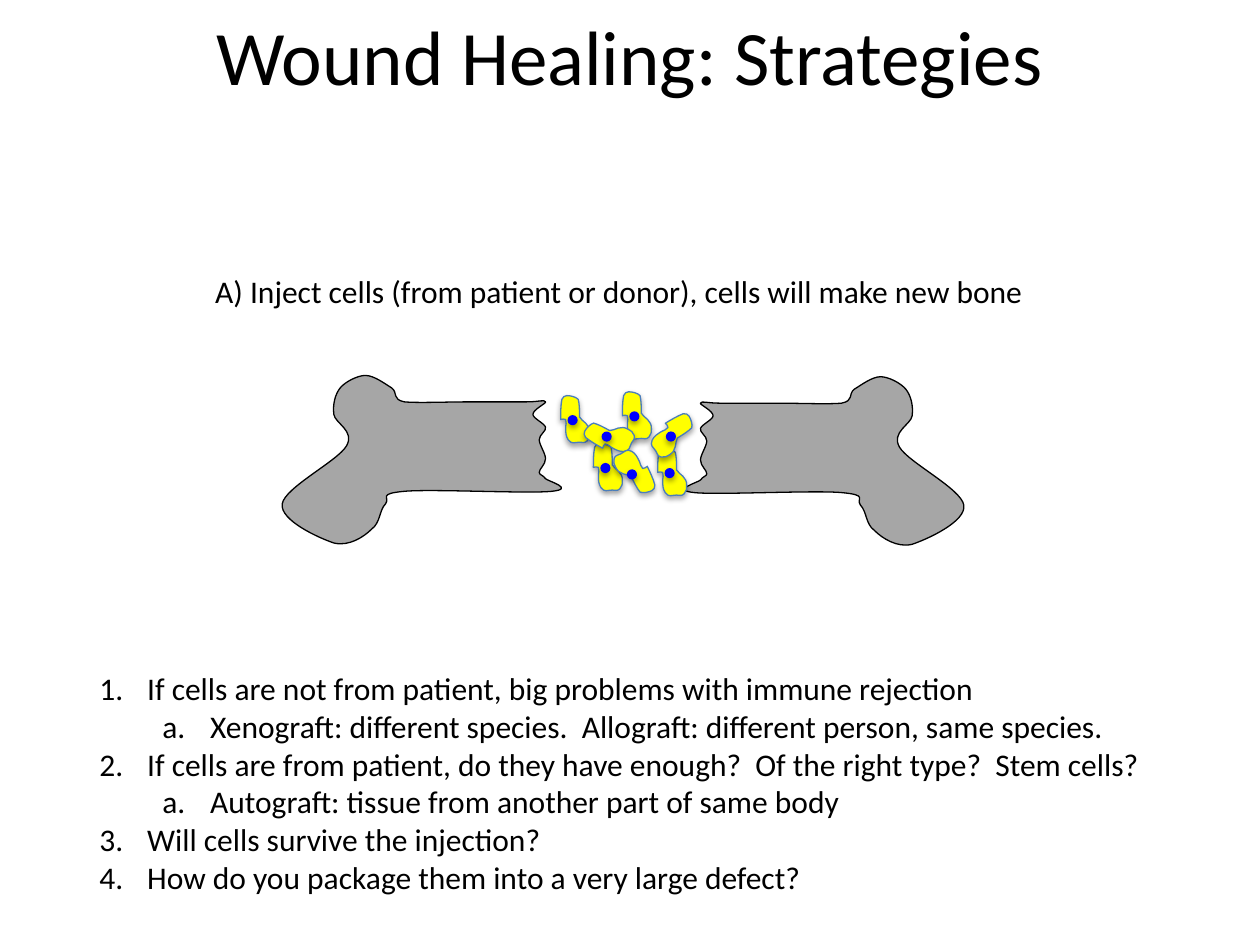
from lxml import etree
from pptx import Presentation
from pptx import util as u
from pptx.dml.color import RGBColor
from pptx.enum import shapes, text
from pptx.oxml import ns

TITLE = "Wound Healing: Strategies"
STRATEGY = "A) Inject cells (from patient or donor), cells will make new bone"
ISSUES = [  # (level, wording)
    (0, "If cells are not from patient, big problems with immune rejection"),
    (1, "Xenograft: different species.  Allograft: different person, same species."),
    (0, "If cells are from patient, do they have enough?  Of the right type?  Stem cells?"),
    (1, "Autograft: tissue from another part of same body"),
    (0, "Will cells survive the injection?"),
    (0, "How do you package them into a very large defect?"),
]
NUMBERING = [("arabicPeriod", 0.38), ("alphaLcPeriod", 0.88)]  # style, indent by level
HANGING = 0.38

# Outlines in inches: a start point, then three points for each Bezier curve
BONE = [
    (7.14, 3.55),
    (7.07, 3.43), (7.23, 3.37), (7.24, 3.3),
    (7.25, 3.22), (7.23, 3.14), (7.19, 3.09),
    (7.15, 3.04), (7.05, 2.99), (6.99, 2.99),
    (6.92, 2.99), (6.83, 3.06), (6.78, 3.09),
    (6.73, 3.13), (6.78, 3.18), (6.68, 3.2),
    (6.58, 3.21), (6.33, 3.2), (6.17, 3.2),
    (6.01, 3.2), (5.82, 3.2), (5.71, 3.2),
    (5.61, 3.2), (5.57, 3.18), (5.56, 3.2),
    (5.55, 3.21), (5.66, 3.26), (5.66, 3.3),
    (5.66, 3.33), (5.57, 3.37), (5.56, 3.4),
    (5.55, 3.43), (5.61, 3.46), (5.61, 3.5),
    (5.61, 3.54), (5.56, 3.61), (5.56, 3.65),
    (5.56, 3.7), (5.61, 3.73), (5.61, 3.76),
    (5.61, 3.78), (5.58, 3.78), (5.56, 3.81),
    (5.54, 3.83), (5.32, 3.89), (5.51, 3.91),
    (5.7, 3.93), (6.46, 3.89), (6.68, 3.91),
    (6.9, 3.93), (6.79, 3.96), (6.83, 4.01),
    (6.88, 4.06), (6.87, 4.16), (6.94, 4.21),
    (7, 4.27), (7.12, 4.35), (7.24, 4.32),
    (7.36, 4.28), (7.67, 4.14), (7.65, 4.01),
    (7.63, 3.88), (7.21, 3.67), (7.14, 3.55),
]
MIRROR_SUM = 9.89  # x of a point plus x of its mirror point

CELL = [
    (0, 0.19),
    (0, 0.14), (0, 0.08), (0.01, 0.03),
    (0.02, 0.01), (0.03, 0), (0.05, 0),
    (0.08, 0), (0.12, 0.01), (0.14, 0.03),
    (0.15, 0.07), (0.15, 0.12), (0.15, 0.17),
    (0.16, 0.19), (0.18, 0.2), (0.2, 0.22),
    (0.22, 0.24), (0.23, 0.26), (0.23, 0.29),
    (0.23, 0.32), (0.23, 0.34), (0.21, 0.36),
    (0.19, 0.38), (0.17, 0.37), (0.15, 0.37),
    (0.11, 0.37), (0.09, 0.39), (0.06, 0.35),
    (0.04, 0.32), (0.04, 0.29), (0.04, 0.25),
    (0.04, 0.23), (0.05, 0.21), (0.04, 0.19),
    (0.03, 0.18), (0.01, 0.19), (0, 0.19),
]
CELL_PLACES = [  # left, top, rotation
    (4.45, 3.14, 0), (4.71, 3.52, 0), (4.94, 3.11, 0), (5.22, 3.56, 0),
    (5.23, 3.27, 58.5), (4.72, 3.27, 299), (4.92, 3.57, 154.5),
]
NUCLEUS_OFFSET, NUCLEUS_SIZE = (0.06, 0.16), 0.07


def color(value):
    return RGBColor.from_string(value)


def add_text(slide, place, items, size=18, align=text.PP_ALIGN.LEFT,
             anchor=text.MSO_ANCHOR.TOP, wrap=False, numbered=False):
    box = slide.shapes.add_textbox(*map(u.Inches, place))
    frame = box.text_frame
    frame.word_wrap, frame.vertical_anchor = wrap, anchor
    for index, (level, wording) in enumerate(items):
        para = frame.paragraphs[0] if index == 0 else frame.add_paragraph()
        para.alignment, para.level = align, level
        span = para.add_run()
        span.text = wording
        span.font.size, span.font.name = u.Pt(size), "Calibri"
        span.font.color.rgb = color("000000")
        if numbered:
            style, indent = NUMBERING[level]
            props = para._p.get_or_add_pPr()
            props.set("marL", str(u.Inches(indent)))
            props.set("indent", str(-u.Inches(HANGING)))
            etree.SubElement(props, ns.qn("a:buAutoNum"), type=style)


def paint(shape, fill, line, shadow=False):
    shape.fill.solid()
    shape.fill.fore_color.rgb = color(fill)
    shape.line.color.rgb = color(line)
    shape.line.width = u.Pt(0.75)
    shape.shadow.inherit = False
    if shadow:
        effects = shape._element.spPr.find(ns.qn("a:effectLst"))
        outer = etree.SubElement(effects, ns.qn("a:outerShdw"), blurRad=str(u.Pt(3.1)),
                                 dist=str(u.Pt(1.8)), dir="5400000", rotWithShape="0")
        tint = etree.SubElement(outer, ns.qn("a:srgbClr"), val="000000")
        etree.SubElement(tint, ns.qn("a:alpha"), val="35000")


def add_outline(slide, outline):
    """Draw a freeform through the curve ends, then bend each side into its curve."""
    points = [(u.Inches(x), u.Inches(y)) for x, y in outline]
    builder = slide.shapes.build_freeform(*points[0], scale=1.0)
    builder.add_line_segments(points[3::3], close=True)
    shape = builder.convert_to_shape()
    sides = list(shape._element.spPr.iter(ns.qn("a:lnTo")))
    for index, side in enumerate(sides):
        side.tag = ns.qn("a:cubicBezTo")
        for child in list(side):
            side.remove(child)
        for x, y in points[3 * index + 1:3 * index + 4]:
            etree.SubElement(side, ns.qn("a:pt"), x=str(x - shape.left), y=str(y - shape.top))
    return shape


def add_cell(slide, left, top, rotation):
    body = add_outline(slide, [(left + x, top + y) for x, y in CELL])
    paint(body, "FFFF00", "4B7EBC", shadow=True)
    dx, dy = NUCLEUS_OFFSET
    nucleus = slide.shapes.add_shape(
        shapes.MSO_SHAPE.OVAL,
        *map(u.Inches, (left + dx, top + dy, NUCLEUS_SIZE, NUCLEUS_SIZE)))
    paint(nucleus, "0000FF", "0000FF", shadow=True)
    body.rotation = nucleus.rotation = rotation


def main():
    deck = Presentation()
    deck.slide_width, deck.slide_height = u.Inches(10), u.Inches(7.5)
    page = deck.slides.add_slide(deck.slide_layouts[6])

    # Title
    add_text(page, (0.5, -0.01, 9, 0.89), [(0, TITLE)], size=44, wrap=True,
             align=text.PP_ALIGN.CENTER, anchor=text.MSO_ANCHOR.MIDDLE)

    # Broken bone: right half and its mirror
    for half in (BONE, [(MIRROR_SUM - x, y - 0.01) for x, y in BONE]):
        paint(add_outline(page, half), "A6A6A6", "000000")

    # Strategy, with the injected cells
    add_text(page, (1.61, 2.11, 6.72, 0.4), [(0, STRATEGY)])
    for place in CELL_PLACES:
        add_cell(page, *place)

    # Open issues
    add_text(page, (0.69, 5.26, 8.56, 1.92), ISSUES, numbered=True)

    deck.save("out.pptx")


if __name__ == "__main__":
    main()
